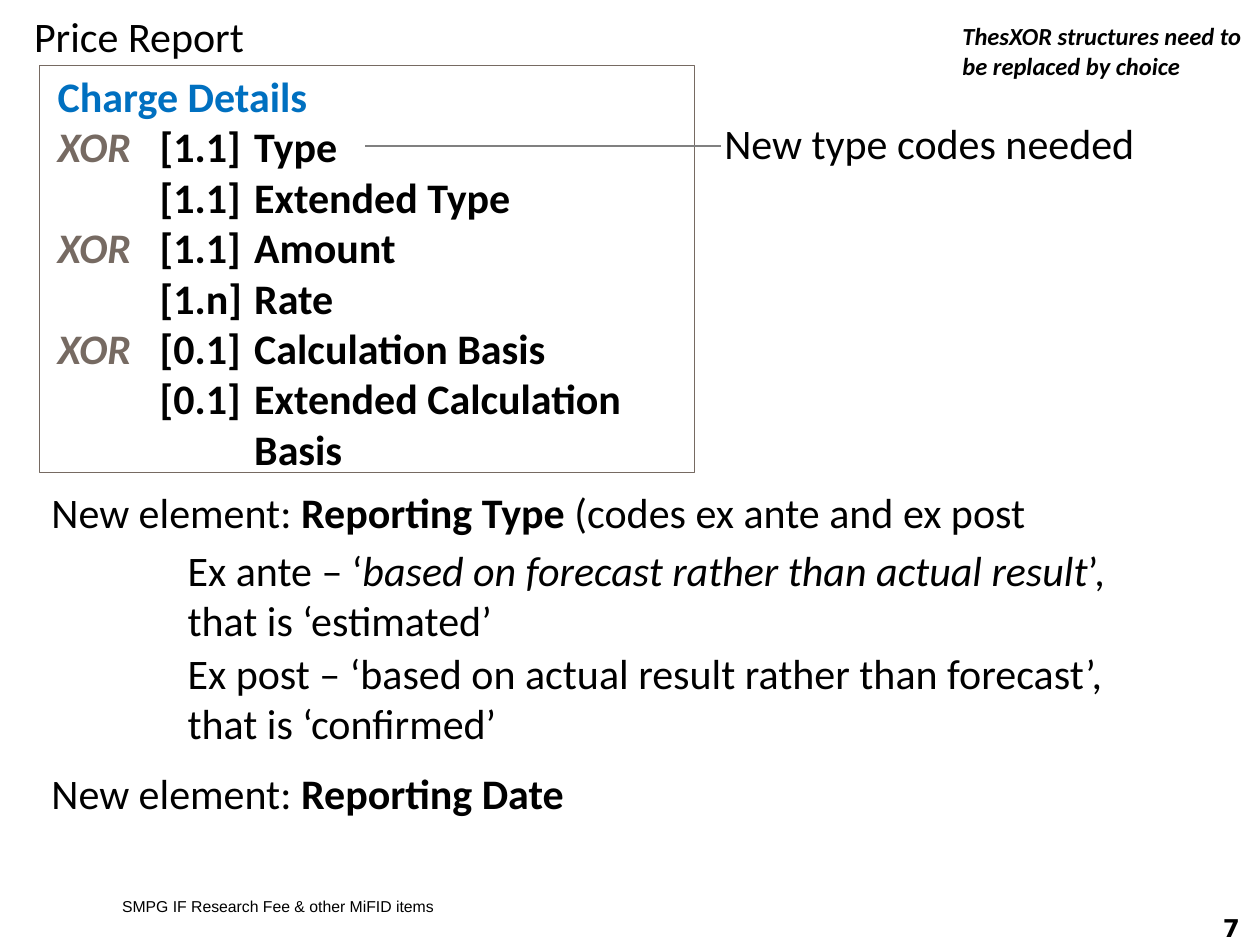
from dataclasses import dataclass

from lxml.etree import SubElement
from pptx import Presentation
from pptx.dml.color import RGBColor
from pptx.enum.shapes import MSO_CONNECTOR, MSO_SHAPE
from pptx.enum.text import MSO_ANCHOR, MSO_AUTO_SIZE, PP_ALIGN
from pptx.oxml.ns import qn
from pptx.util import Inches, Pt


@dataclass(frozen=True)
class Theme:
    font: str = "Calibri"
    footer_font: str = "Arial"
    number_font: str = "DejaVu Sans"
    text: RGBColor = RGBColor(0, 0, 0)
    accent: RGBColor = RGBColor(0x00, 0x70, 0xC0)
    muted: RGBColor = RGBColor(0x76, 0x6A, 0x62)
    line: RGBColor = RGBColor(0x80, 0x80, 0x80)
    paper: RGBColor = RGBColor(0xFF, 0xFF, 0xFF)
    body: int = 24
    note: int = 14
    footer: int = 9


THEME = Theme()


@dataclass(frozen=True)
class Span:
    text: str
    bold: bool = False
    italic: bool = False
    color: RGBColor = THEME.text


@dataclass(frozen=True)
class Area:
    left: float
    top: float
    width: float
    height: float

    def lengths(self) -> list[Inches]:
        return [Inches(v) for v in (self.left, self.top, self.width, self.height)]


@dataclass(frozen=True)
class Element:
    name: str
    count: str = ""
    choice: bool = False

    def spans(self) -> list[Span]:
        marker = [Span("XOR", bold=True, italic=True, color=THEME.muted)] if self.choice else []
        return marker + [Span(f"\t{self.count}\t{self.name}", bold=True)]


ELEMENTS = [
    Element("Type", "[1.1]", choice=True),
    Element("Extended Type", "[1.1]"),
    Element("Amount", "[1.1]", choice=True),
    Element("Rate", "[1.n]"),
    Element("Calculation Basis", "[0.1]", choice=True),
    Element("Extended Calculation", "[0.1]"),
    Element("Basis"),
]


def set_tabs(para, positions: tuple[float, ...]) -> None:
    tab_list = SubElement(para._p.get_or_add_pPr(), qn("a:tabLst"))
    for position in positions:
        SubElement(tab_list, qn("a:tab"), pos=str(Inches(position)), algn="l")


def write(box, paragraphs: list[list[Span]], *, size: int = THEME.body,
          font: str = THEME.font, align=PP_ALIGN.LEFT, anchor=MSO_ANCHOR.TOP,
          wrap: bool = True, grow: bool = False, tabs: tuple[float, ...] = ()) -> None:
    """Fill a shape with paragraphs of formatted spans."""
    frame = box.text_frame
    frame.word_wrap = wrap
    frame.vertical_anchor = anchor
    frame.auto_size = MSO_AUTO_SIZE.SHAPE_TO_FIT_TEXT if grow else MSO_AUTO_SIZE.NONE
    for index, spans in enumerate(paragraphs):
        para = frame.add_paragraph() if index else frame.paragraphs[0]
        para.alignment = align
        if tabs:
            set_tabs(para, tabs)
        for span in spans:
            run = para.add_run()
            run.text = span.text
            run.font.name = font
            run.font.size = Pt(size)
            run.font.bold = span.bold
            run.font.italic = span.italic
            run.font.color.rgb = span.color


def add_text(page, area: Area, *paragraphs: list[Span], **text_format) -> None:
    write(page.shapes.add_textbox(*area.lengths()), list(paragraphs), **text_format)


def add_title(page, text: str) -> None:
    title = page.shapes.title
    title.left, title.top, title.width, title.height = Area(0.17, 0, 9.73, 0.56).lengths()
    write(title, [[Span(text)]], anchor=MSO_ANCHOR.MIDDLE)


def add_charge_details(page) -> None:
    frame = page.shapes.add_shape(MSO_SHAPE.RECTANGLE, *Area(0.31, 0.52, 5.2, 3.23).lengths())
    frame.shadow.inherit = False
    frame.fill.solid()
    frame.fill.fore_color.rgb = THEME.paper
    frame.line.color.rgb = THEME.muted
    frame.line.width = Pt(0.25)
    add_text(page, Area(0.36, 0.51, 5.7, 3.33),
             [Span("Charge Details", bold=True, color=THEME.accent)],
             *(element.spans() for element in ELEMENTS),
             tabs=(0.81, 1.56), grow=True)


def add_pointer(page, start: float, end: float, height: float) -> None:
    """Draw a level line from the Type element to its remark."""
    pointer = page.shapes.add_connector(MSO_CONNECTOR.STRAIGHT, Inches(start), Inches(height),
                                        Inches(end), Inches(height))
    pointer.line.color.rgb = THEME.line
    pointer.line.width = Pt(1.5)
    SubElement(pointer._element.spPr, qn("a:effectLst"))


def add_new_elements(page) -> None:
    label = Span("New element: ")
    add_text(page, Area(0.31, 3.81, 7.95, 0.5),
             [label, Span("Reporting Type ", bold=True), Span("(codes ex ante and ex post")],
             wrap=False, grow=True)
    add_text(page, Area(1.39, 4.27, 8.02, 0.91),
             [Span("Ex ante – ‘"),
              Span("based on forecast rather than actual result", italic=True),
              Span("’, that is ‘estimated’")], grow=True)
    add_text(page, Area(1.39, 5.09, 8.02, 0.91),
             [Span("Ex post – ‘based on actual result rather than forecast’, "
                   "that is ‘confirmed’")], grow=True)
    add_text(page, Area(0.31, 6.04, 4.31, 0.5),
             [label, Span("Reporting Date", bold=True)], wrap=False, grow=True)


def add_footer(page) -> None:
    add_text(page, Area(0.87, 7.07, 6.21, 0.25),
             [Span("SMPG IF Research Fee & other MiFID items")],
             size=THEME.footer, font=THEME.footer_font, anchor=MSO_ANCHOR.MIDDLE)
    add_text(page, Area(9.11, 7.24, 0.83, 0.25), [Span("7", bold=True)],
             size=THEME.note, font=THEME.number_font,
             align=PP_ALIGN.RIGHT, anchor=MSO_ANCHOR.MIDDLE)


def main() -> None:
    deck = Presentation()
    deck.slide_width, deck.slide_height = Inches(10), Inches(7.5)
    page = deck.slides.add_slide(deck.slide_layouts.get_by_name("Title Only"))
    add_title(page, "Price Report")
    add_footer(page)
    add_charge_details(page)
    add_text(page, Area(7.54, 0.12, 2.46, 0.57),
             [Span("ThesXOR structures need to be replaced by choice", bold=True, italic=True)],
             size=THEME.note, grow=True)
    add_new_elements(page)
    add_text(page, Area(5.65, 0.88, 3.49, 0.5), [Span("New type codes needed")],
             wrap=False, grow=True)
    add_pointer(page, 2.9, 5.72, 1.16)
    deck.save("out.pptx")


if __name__ == "__main__":
    main()
